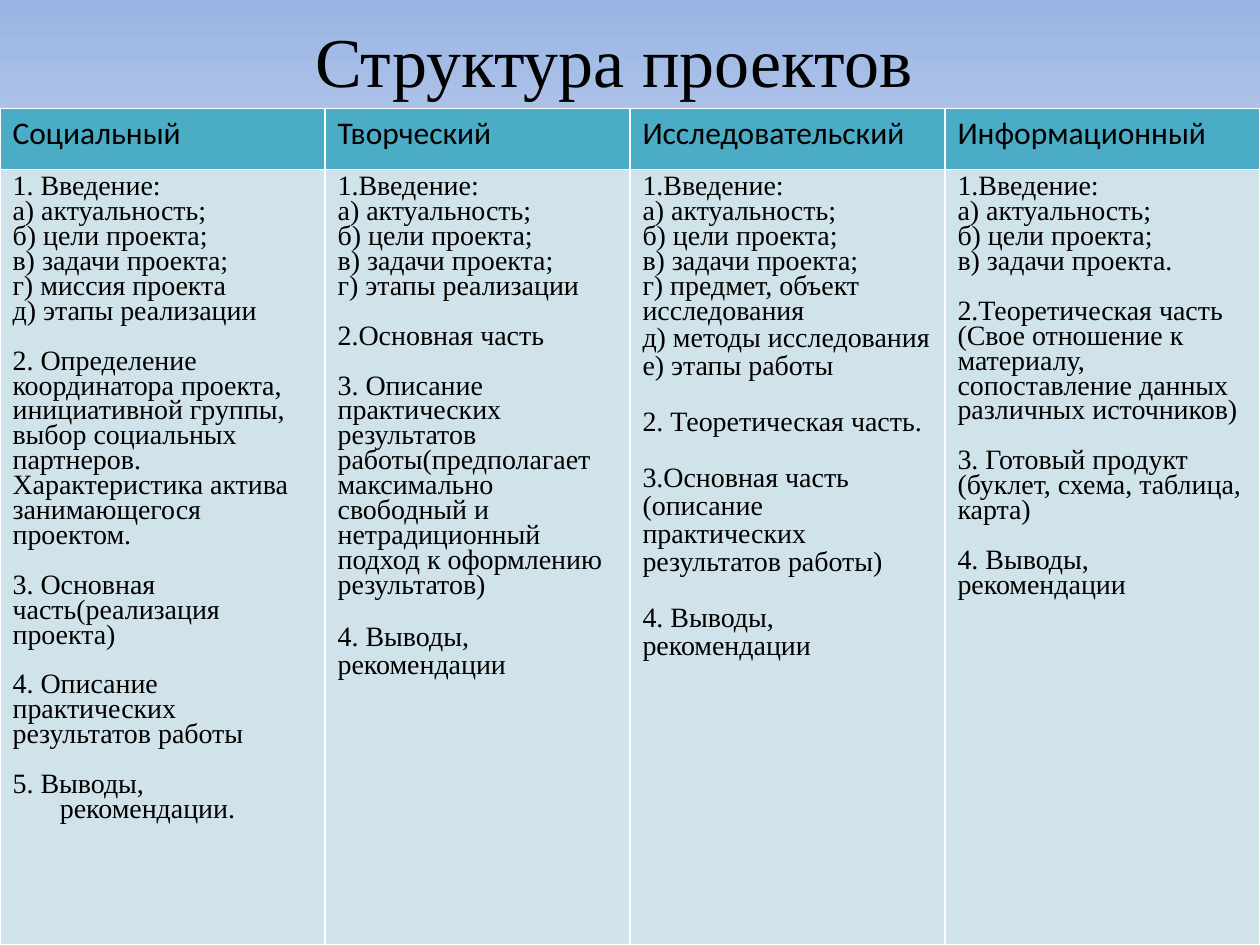
from dataclasses import dataclass

from lxml import etree
from pptx import Presentation
from pptx import util as u
from pptx.dml.color import RGBColor
from pptx.enum import text
from pptx.oxml import ns


@dataclass(frozen=True)
class Theme:
    ink: str = "000000"
    header: str = "4BACC6"
    body: str = "D0E3EA"
    border: str = "FFFFFF"
    border_width: float = 1
    gradient: tuple = ((0, "9AB5E4"), (25, "C2D1ED"), (48, "E1E8F5"), (71, "FFFFFF"))
    serif: str = "Times New Roman"
    sans: str = "Calibri"
    title_size: float = 40
    header_size: float = 18
    body_size: float = 16


@dataclass(frozen=True)
class Line:
    text: str
    spacing: float = 0.8
    gap: float = 0
    hang: float = 0


@dataclass(frozen=True)
class Column:
    heading: str
    width: float
    lines: tuple


THEME = Theme()
GAP = 14.25
WIDE_GAP = 16
INTRO = (Line("а) актуальность;"), Line("б) цели проекта;"))
TASKS = Line("в) задачи проекта;")
OPENING = (Line("1.Введение:"), *INTRO)
CONCLUSION = "4. Выводы, рекомендации"

COLUMNS = (
    Column("Социальный", 185.76, (
        Line("1. Введение:"), *INTRO, TASKS,
        Line("г) миссия проекта"),
        Line("д) этапы реализации"),
        Line("2. Определение координатора проекта, инициативной группы, "
             "выбор социальных партнеров.", gap=GAP),
        Line("Характеристика актива занимающегося проектом."),
        Line("3. Основная часть(реализация проекта)", gap=GAP),
        Line("4. Описание практических", gap=GAP),
        Line("результатов работы"),
        Line("5. Выводы, рекомендации.", gap=GAP, hang=27),
    )),
    Column("Творческий", 174.24, (
        *OPENING, TASKS,
        Line("г) этапы реализации"),
        Line("2.Основная часть", gap=GAP),
        Line("3. Описание практических результатов работы(предполагает "
             "максимально свободный и нетрадиционный подход к оформлению "
             "результатов)", gap=GAP),
        Line(CONCLUSION, 0.9, GAP),
    )),
    Column("Исследовательский", 180, (
        *OPENING, TASKS,
        Line("г) предмет, объект исследования"),
        Line("д) методы исследования", 0.9),
        Line("е) этапы работы", 0.9),
        Line("2. Теоретическая часть.", 0.9, WIDE_GAP),
        Line("3.Основная часть (описание практических результатов работы)",
             0.9, WIDE_GAP),
        Line(CONCLUSION, 0.9, WIDE_GAP),
    )),
    Column("Информационный", 180, (
        *OPENING,
        Line("в) задачи проекта."),
        Line("2.Теоретическая часть", gap=GAP),
        Line("(Свое отношение к материалу, сопоставление данных "
             "различных источников)"),
        Line("3. Готовый продукт (буклет, схема, таблица, карта)", gap=GAP),
        Line(CONCLUSION, gap=GAP),
    )),
)


def set_font(p, name: str, size: float) -> None:
    p.font.name = name
    p.font.size = u.Pt(size)
    p.font.color.rgb = RGBColor.from_string(THEME.ink)


def add_color(parent, color: str) -> None:
    etree.SubElement(parent, ns.qn("a:srgbClr"), val=color)


def paint_background(s) -> None:
    fill = s.background.fill
    fill.gradient()
    fill.gradient_angle = 270
    stops = s.element.find(".//" + ns.qn("a:gsLst"))
    for stop in list(stops):
        stops.remove(stop)
    for percent, color in THEME.gradient:
        add_color(etree.SubElement(stops, ns.qn("a:gs"), pos=str(percent * 1000)), color)


def style_cell(cell, color: str) -> None:
    cell.fill.solid()
    cell.fill.fore_color.rgb = RGBColor.from_string(color)
    props = cell._tc.get_or_add_tcPr()
    for i, side in enumerate("LRTB"):
        ln = etree.Element(ns.qn(f"a:ln{side}"), w=str(u.Pt(THEME.border_width)))
        add_color(etree.SubElement(ln, ns.qn("a:solidFill")), THEME.border)
        props.insert(i, ln)


def write_lines(tf, lines: tuple) -> None:
    for i, line in enumerate(lines):
        p = tf.add_paragraph() if i else tf.paragraphs[0]
        p.text = line.text
        p.line_spacing = line.spacing
        set_font(p, THEME.serif, THEME.body_size)
        if line.gap:
            p.space_before = u.Pt(line.gap)
        if line.hang:
            props = p._p.get_or_add_pPr()
            props.set("marL", str(u.Pt(line.hang)))
            props.set("indent", str(-u.Pt(line.hang)))


def add_title(s, title: str) -> None:
    sp = s.shapes.add_textbox(u.Pt(44.64), u.Pt(0), u.Pt(612), u.Pt(67.68))
    tf = sp.text_frame
    tf.word_wrap = True
    tf.vertical_anchor = text.MSO_ANCHOR.MIDDLE
    p = tf.paragraphs[0]
    p.text = title
    p.alignment = text.PP_ALIGN.CENTER
    set_font(p, THEME.serif, THEME.title_size)


def add_structure_table(s, columns: tuple) -> None:
    table = s.shapes.add_table(2, len(columns), u.Pt(0), u.Pt(61.92),
                               u.Pt(720), u.Pt(478.08)).table
    for row, height in zip(table.rows, (35, 443.08)):
        row.height = u.Pt(height)
    for i, column in enumerate(columns):
        table.columns[i].width = u.Pt(column.width)
        header, body = table.cell(0, i), table.cell(1, i)
        style_cell(header, THEME.header)
        style_cell(body, THEME.body)
        p = header.text_frame.paragraphs[0]
        p.text = column.heading
        set_font(p, THEME.sans, THEME.header_size)
        p.font.bold = False
        write_lines(body.text_frame, column.lines)


def main() -> None:
    prs = Presentation()
    prs.slide_width, prs.slide_height = u.Pt(720), u.Pt(540)
    s = prs.slides.add_slide(prs.slide_layouts[6])
    paint_background(s)
    add_title(s, "Структура проектов")
    add_structure_table(s, COLUMNS)
    prs.save("out.pptx")


if __name__ == "__main__":
    main()
